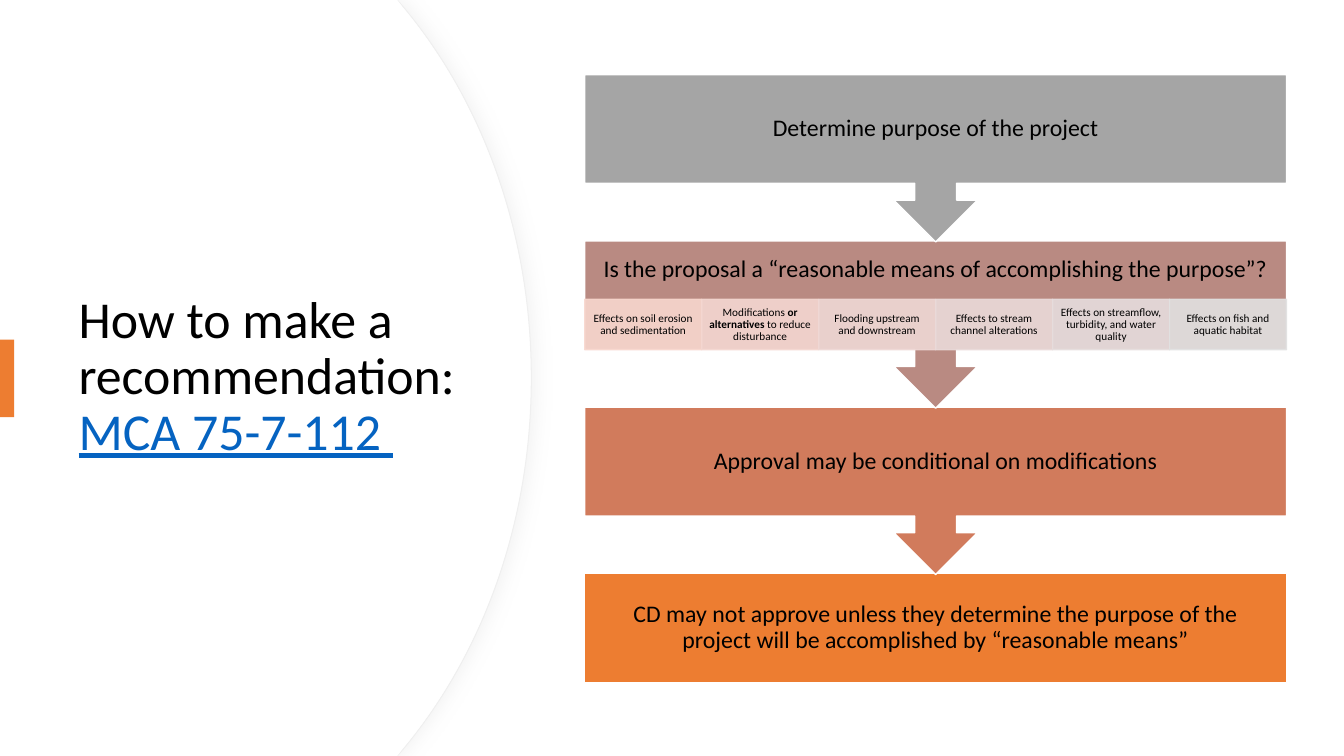
from lxml import etree
from pptx import Presentation
from pptx.dml.color import RGBColor
from pptx.enum.shapes import MSO_SHAPE
from pptx.enum.text import MSO_ANCHOR, MSO_AUTO_SIZE, PP_ALIGN
from pptx.oxml import parse_xml
from pptx.oxml.ns import nsdecls, qn
from pptx.util import Inches, Pt

RECT = MSO_SHAPE.RECTANGLE
CALLOUT = MSO_SHAPE.UP_ARROW_CALLOUT
MIDDLE = MSO_ANCHOR.MIDDLE
CENTER = PP_ALIGN.CENTER
START = PP_ALIGN.LEFT
FIXED = MSO_AUTO_SIZE.NONE

LEFT, TOP, WIDTH, PITCH = 5.8, 0.74, 6.96, 1.65
BOX_H, STEP_H = 1.08, 1.66
CELL_TOP, CELL_H = 2.97, 0.5

STEPS = [
    ("Determine purpose of the project", "A5A5A5", BOX_H),
    ("Is the proposal a “reasonable means of accomplishing the purpose”?",
     "B98A82", BOX_H - CELL_H),
    ("Approval may be conditional on modifications", "D17B5C", BOX_H),
    ("CD may not approve unless they determine the purpose of the project "
     "will be accomplished by “reasonable means”", "ED7D31", BOX_H),
]
FACTORS = [
    (["Effects on soil erosion and sedimentation"], "F8D7CE"),
    (["Modifications ", "or alternatives ", "to reduce disturbance"], "F4D7D1"),
    (["Flooding upstream and downstream"], "EFD8D5"),
    (["Effects to stream channel alterations"], "EADAD9"),
    (["Effects on streamflow, turbidity, and water quality"], "E6DDDD"),
    (["Effects on fish and aquatic habitat"], "E1E1E1"),
]


def color(code):
    return RGBColor.from_string(code)


def paint(shape, fill, line=None, width=1):
    shape.shadow.inherit = False
    shape.fill.solid()
    shape.fill.fore_color.rgb = color(fill)
    if line:
        shape.line.color.rgb = color(line)
        shape.line.width = Pt(width)
    else:
        shape.line.fill.background()


def fade(shape, percent):
    for node in shape.element.spPr.iter(qn("a:srgbClr")):
        etree.SubElement(node, qn("a:alpha"), val=str(percent * 1000))


def block(slide, kind, box, fill, line=None):
    shape = slide.shapes.add_shape(kind, *map(Inches, box))
    paint(shape, fill, line)
    return shape


def style(run, size, code="000000"):
    run.font.name = "Calibri"
    run.font.size = Pt(size)
    run.font.color.rgb = color(code)


def label(slide, box, parts, size, side, edge):
    frame = slide.shapes.add_textbox(*map(Inches, box)).text_frame
    frame.word_wrap = True
    frame.vertical_anchor = MIDDLE
    frame.margin_left = frame.margin_right = Inches(side)
    frame.margin_top = frame.margin_bottom = Inches(edge)
    para = frame.paragraphs[0]
    para.alignment = CENTER
    para.line_spacing = 0.9
    for index, part in enumerate(parts):
        run = para.add_run()
        run.text = part
        style(run, size)
        run.font.bold = index == 1


def bend(lines):
    curve = etree.Element(qn("a:cubicBezTo"))
    lines[0].addprevious(curve)
    for line in lines:
        curve.append(line[0])
        line.getparent().remove(line)


def panel(slide, shift):
    upper = [(3.94, 0), (4.01 - shift, 0.08), (4.79 - shift, 1.02),
             (5.27 - shift, 2.32), (5.27 - shift, 3.75)]
    lower = [(x, 7.5 - y) for x, y in reversed(upper[:-1])]
    points = [(Inches(x), Inches(y)) for x, y in upper + lower + [(0, 7.5)]]
    maker = slide.shapes.build_freeform(0, 0)
    maker.add_line_segments(points, close=True)
    shape = maker.convert_to_shape()
    lines = list(shape.element.spPr.iter(qn("a:lnTo")))
    bend(lines[2:5])
    bend(lines[5:8])
    return shape


def shade(shape):
    old = shape.element.spPr.find(qn("a:effectLst"))
    new = parse_xml(
        f'<a:effectLst {nsdecls("a")}><a:outerShdw blurRad="{Pt(12)}" '
        f'dist="{Pt(3)}" dir="0" algn="l" rotWithShape="0">'
        '<a:srgbClr val="D9D9D9"><a:alpha val="30000"/></a:srgbClr>'
        '</a:outerShdw></a:effectLst>')
    shape.element.spPr.replace(old, new)


def heading(slide):
    title = slide.shapes.title
    title.left, title.top = Inches(0.68), Inches(1.27)
    title.width, title.height = Inches(3.94), Inches(4.95)
    title.element.getparent().append(title.element)
    frame = title.text_frame
    frame.word_wrap = True
    frame.auto_size = FIXED
    frame.vertical_anchor = MIDDLE
    para = frame.paragraphs[0]
    para.alignment = START
    para.line_spacing = 0.9
    for text, code in (("How to make a recommendation: ", "000000"),
                       ("MCA 75-7-112 ", "0563C1")):
        run = para.add_run()
        run.text = text
        style(run, 37, code)
    run.font.underline = True


def steps(slide):
    last = len(STEPS) - 1
    for index in range(last, -1, -1):
        text, fill, height = STEPS[index]
        top = TOP + index * PITCH
        kind, tall = (RECT, BOX_H) if index == last else (CALLOUT, STEP_H)
        shape = block(slide, kind, (LEFT, top, WIDTH, tall), fill, "FFFFFF")
        if kind == CALLOUT:
            shape.rotation = 180
        label(slide, (LEFT, top, WIDTH, height), [text], 17, 0.13, 0.13)


def factors(slide):
    width = WIDTH / len(FACTORS)
    for index, (parts, fill) in enumerate(FACTORS):
        box = (LEFT + index * width, CELL_TOP, width, CELL_H)
        fade(block(slide, RECT, box, fill, fill), 90)
        label(slide, box, parts, 8, 0.06, 0.01)


def main():
    deck = Presentation()
    deck.slide_width, deck.slide_height = Inches(13.33), Inches(7.5)
    slide = deck.slides.add_slide(deck.slide_layouts[5])
    rim = panel(slide, 0)
    paint(rim, "FFFFFF", "EFEFEF", 0.75)
    shade(rim)
    paint(panel(slide, 0.01), "FFFFFF")
    heading(slide)
    block(slide, RECT, (0, 3.37, 0.14, 0.77), "ED7D31")
    steps(slide)
    factors(slide)
    deck.save("out.pptx")


if __name__ == "__main__":
    main()
